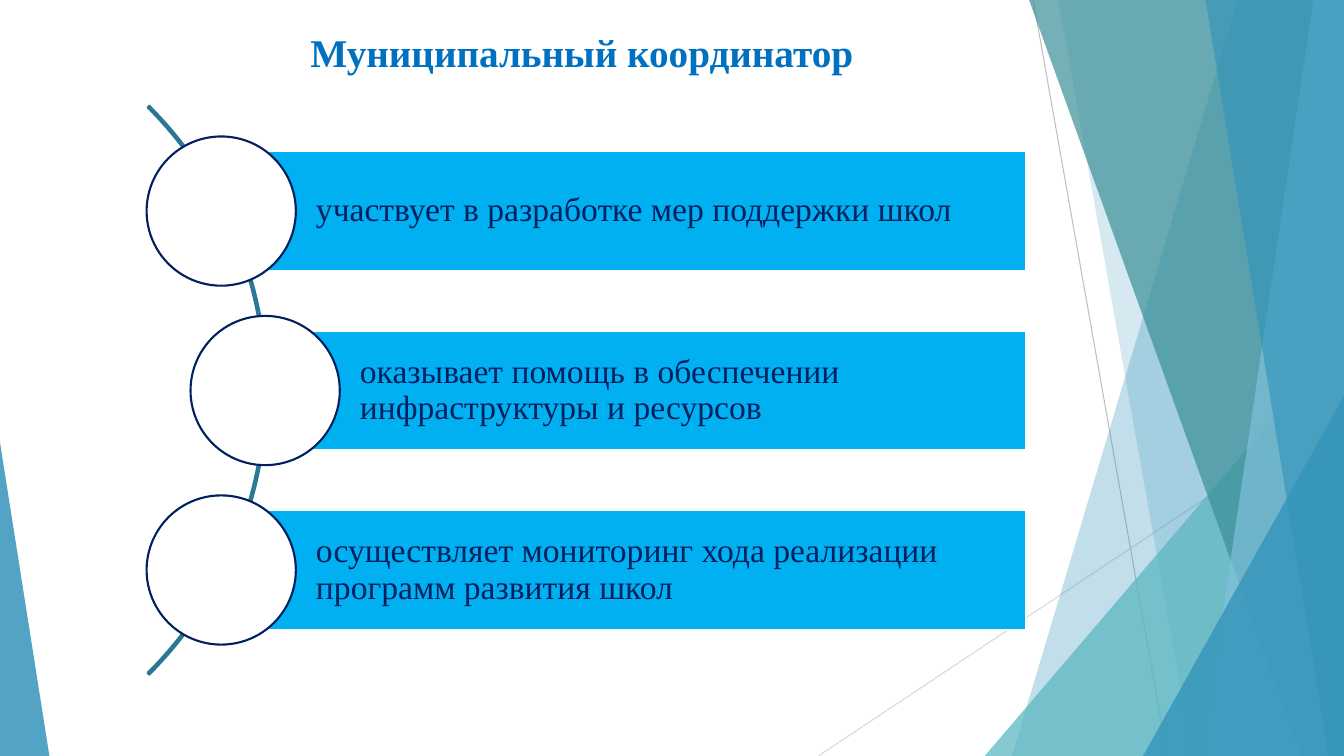
from lxml import etree
from pptx import Presentation
from pptx.dml.color import RGBColor
from pptx.enum import shapes, text
from pptx.oxml import ns
from pptx.util import Pt

WHITE = RGBColor(0xFF, 0xFF, 0xFF)
NAVY = RGBColor(0x00, 0x20, 0x60)
SKY = RGBColor(0x00, 0xB0, 0xF0)
TITLE_BLUE = RGBColor(0x00, 0x70, 0xC0)
ARC_TEAL = RGBColor(0x2A, 0x77, 0x95)
BLUE = RGBColor(0x34, 0x94, 0xBA)
AQUA = RGBColor(0x58, 0xB6, 0xC0)
TEAL = RGBColor(0x3A, 0x8F, 0x98)
PALE_BLUE = RGBColor(0x7F, 0xC1, 0xDB)
GREY = RGBColor(0xBF, 0xBF, 0xBF)
LIGHT_GREY = RGBColor(0xD9, 0xD9, 0xD9)

WIDTH, HEIGHT = 960, 540
BAR_RIGHT, BAR_HEIGHT, BAR_TOP, BAR_STEP = 733, 85.5, 108, 128.2
CIRCLE = 106.6


def paint(shape, fill=None, line=None, opacity=100):
    shape.shadow.inherit = False
    if fill is None:
        shape.fill.background()
    else:
        shape.fill.solid()
        shape.fill.fore_color.rgb = fill
        if opacity < 100:
            color = shape._element.spPr.find(".//" + ns.qn("a:srgbClr"))
            etree.SubElement(color, ns.qn("a:alpha"), val=str(opacity * 1000))
    if line is None:
        shape.line.fill.background()
    else:
        shape.line.color.rgb = line
        shape.line.width = Pt(1.5)


def write(box, words, frame_format, font_format, color):
    for name, value in frame_format.items():
        setattr(box.text_frame, name, value)
    para = box.text_frame.paragraphs[0]
    para.alignment = text.PP_ALIGN.LEFT
    span = para.add_run()
    span.text = words
    for name, value in font_format.items():
        setattr(span.font, name, value)
    span.font.color.rgb = color
    return para


deck = Presentation()
deck.slide_width, deck.slide_height = Pt(WIDTH), Pt(HEIGHT)
page = deck.slides.add_slide(deck.slide_layouts[6])

for ends, color in [
    ((738, 0, 833.8, HEIGHT), GREY),
    ((WIDTH, 290.2, 584.6, HEIGHT), LIGHT_GREY),
]:
    ray = page.shapes.add_connector(
        shapes.MSO_CONNECTOR.STRAIGHT, *[Pt(value) for value in ends]
    )
    ray.line.color.rgb = color
    ray.line.width = Pt(0.75)
    etree.SubElement(ray._element.spPr, ns.qn("a:effectLst"))

facets = [
    ("band", (884.2, 722.9), BLUE, 30),
    ("band", (756, 851.8), BLUE, 20),
    ("triangle", (703.4, 239.8, 256.6, 1), AQUA, 72),
    ("band", (735.1, 929.5), TEAL, 70),
    ("band", (938.2, 858.2), PALE_BLUE, 70),
    ("band", (861.1, 949), BLUE, 65),
    ("triangle", (816.5, 283, 143.5, 1), BLUE, 80),
    ("triangle", (0, 316.1, 35.3, 0), BLUE, 85),
]
for kind, place, color, opacity in facets:
    if kind == "band":
        top_x, bottom_x = place
        outline = page.shapes.build_freeform(Pt(top_x), 0)
        outline.add_line_segments(
            [(Pt(WIDTH), 0), (Pt(WIDTH), Pt(HEIGHT)), (Pt(bottom_x), Pt(HEIGHT))],
            close=True,
        )
        facet = outline.convert_to_shape()
    else:
        left, top, width, apex = place
        facet = page.shapes.add_shape(
            shapes.MSO_SHAPE.ISOSCELES_TRIANGLE,
            Pt(left), Pt(top), Pt(width), Pt(HEIGHT - top),
        )
        facet.adjustments[0] = apex
    paint(facet, fill=color, opacity=opacity)

title = page.shapes.add_textbox(Pt(214.6), Pt(16.6), Pt(406.8), Pt(41))
title_frame = {"word_wrap": False, "auto_size": text.MSO_AUTO_SIZE.SHAPE_TO_FIT_TEXT}
title_font = {"name": "Times New Roman", "size": Pt(28), "bold": True}
write(title, "Муниципальный координатор", title_frame, title_font, TITLE_BLUE)

arc = page.shapes.add_shape(
    shapes.MSO_SHAPE.BLOCK_ARC, Pt(-383.8), Pt(-8.6), Pt(574.6), Pt(574.6)
)
for index, value in enumerate((189, 27, 0.003)):
    arc.adjustments[index] = value
paint(arc, line=ARC_TEAL)

bar_frame = {
    "word_wrap": True,
    "vertical_anchor": text.MSO_ANCHOR.MIDDLE,
    "margin_left": Pt(67.7),
    "margin_top": Pt(5),
    "margin_right": Pt(5),
    "margin_bottom": Pt(5),
}
bar_font = {"name": "Times New Roman", "size": Pt(24)}
duties = [
    (158, "участвует в разработке мер поддержки школ"),
    (189.4, "оказывает помощь в обеспечении инфраструктуры и ресурсов"),
    (158, "осуществляет мониторинг хода реализации программ развития школ"),
]
for row, (left, words) in enumerate(duties):
    top = BAR_TOP + row * BAR_STEP
    bar = page.shapes.add_shape(
        shapes.MSO_SHAPE.RECTANGLE,
        Pt(left), Pt(top), Pt(BAR_RIGHT - left), Pt(BAR_HEIGHT),
    )
    paint(bar, fill=SKY, line=WHITE)
    write(bar, words, bar_frame, bar_font, NAVY).line_spacing = 0.9

    circle = page.shapes.add_shape(
        shapes.MSO_SHAPE.OVAL,
        Pt(left - CIRCLE / 2), Pt(top + (BAR_HEIGHT - CIRCLE) / 2),
        Pt(CIRCLE), Pt(CIRCLE),
    )
    paint(circle, fill=WHITE, line=NAVY)

deck.save("out.pptx")
